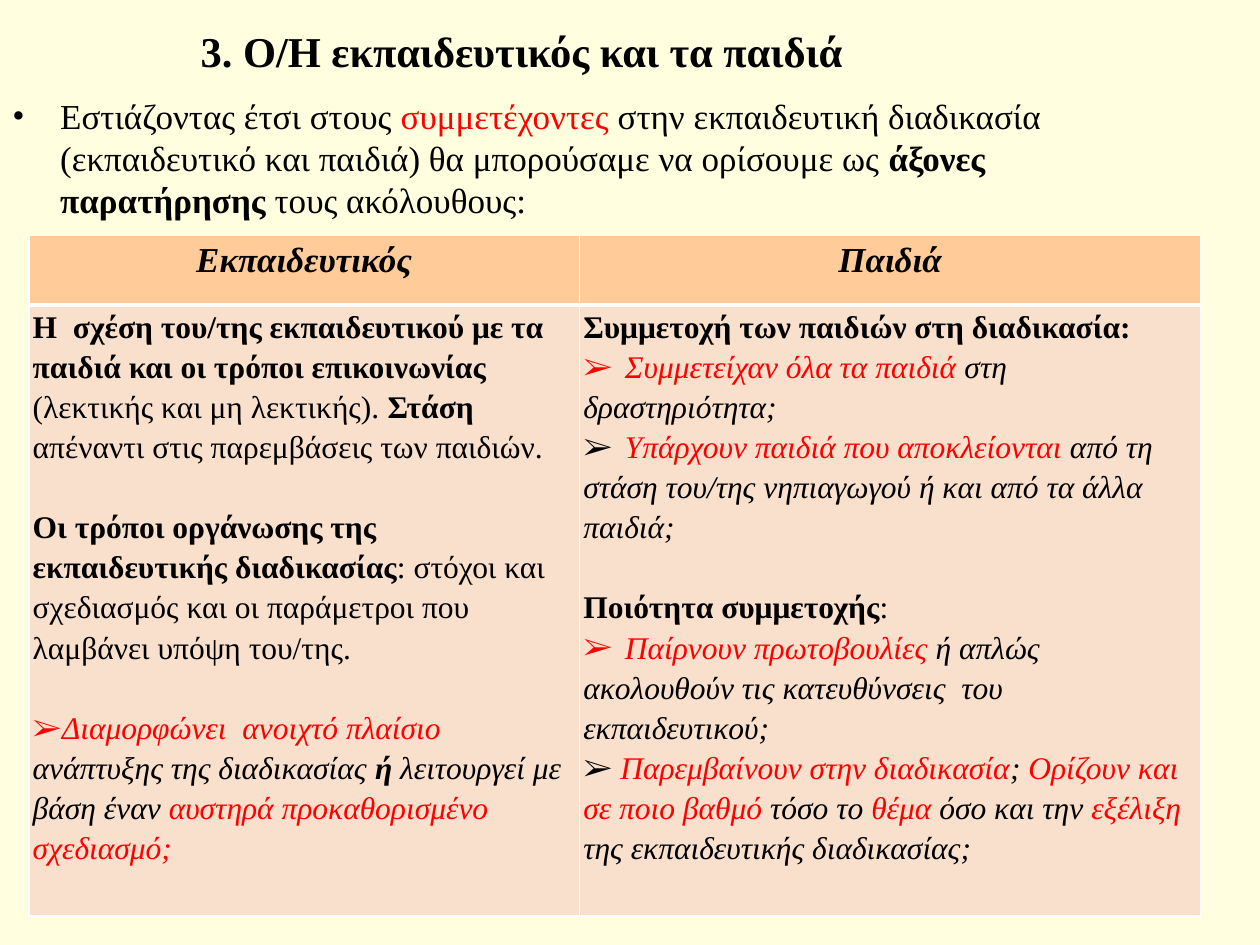
from lxml import etree
from pptx import Presentation
from pptx.dml.color import RGBColor
from pptx.enum import text
from pptx.oxml.ns import qn
from pptx.util import Inches, Pt

THEME = {
    "font": "Times New Roman", "title": 24.3, "lead": 20, "heading": 20, "cell": 18,
    "ink": "000000", "accent": "FF0000", "background": "FFFFE0",
    "header": "FFCC99", "body": "F9E0CD", "border": "FFFFFF",
}

# style letters
TITLE = [("3. Ο/Η εκπαιδευτικός και τα παιδιά", "b")]
LEAD = [
    ("Εστιάζοντας έτσι στους ", ""), ("συμμετέχοντες ", "r"),
    ("στην εκπαιδευτική διαδικασία (εκπαιδευτικό και παιδιά) θα μπορούσαμε να ορίσουμε ως ", ""),
    ("άξονες παρατήρησης ", "b"), ("τους ακόλουθους:", ""),
]
HEADINGS = ["Εκπαιδευτικός", "Παιδιά"]
TEACHER = [
    ("opening", [
        ("Η  σχέση του/της εκπαιδευτικού με τα παιδιά και οι τρόποι επικοινωνίας ", "b"),
        ("(λεκτικής και μη λεκτικής). ", ""), ("Στάση ", "b"),
        ("απέναντι στις παρεμβάσεις των παιδιών.", "")]),
    ("section", [
        ("Οι τρόποι οργάνωσης της εκπαιδευτικής διαδικασίας", "b"),
        (": στόχοι και σχεδιασμός και οι παράμετροι που λαμβάνει υπόψη του/της.", "")]),
    ("section bullet", [
        ("Διαμορφώνει  ανοιχτό πλαίσιο ", "ri"), ("ανάπτυξης της διαδικασίας ", "i"),
        ("ή ", "bi"), ("λειτουργεί με βάση έναν ", "i"),
        ("αυστηρά προκαθορισμένο σχεδιασμό;", "ri")]),
]
CHILDREN = [
    ("opening", [("Συμμετοχή των παιδιών στη διαδικασία:", "b")]),
    ("bullet", [("\tΣυμμετείχαν όλα τα παιδιά ", "ri"), ("στη δραστηριότητα;", "i")]),
    ("bullet", [
        ("\t", "i"), ("Υπάρχουν παιδιά που αποκλείονται", "ri"),
        (" από τη στάση του/της νηπιαγωγού ή και από τα άλλα παιδιά;", "i")]),
    ("section", [("Ποιότητα συμμετοχής", "b"), (":", "")]),
    ("bullet", [
        ("\tΠαίρνουν πρωτοβουλίες ", "ri"),
        ("ή απλώς ακολουθούν τις κατευθύνσεις  του εκπαιδευτικού;", "i")]),
    ("bullet", [
        (" ", "i"), ("Παρεμβαίνουν στην διαδικασία", "ri"), ("; ", "i"),
        ("Ορίζουν και σε ποιο βαθμό ", "ri"), ("τόσο το ", "i"), ("θέμα ", "ri"),
        ("όσο και την ", "i"), ("εξέλιξη", "ri"),
        (" της εκπαιδευτικής διαδικασίας;", "i")]),
]
COLUMN_WIDTHS = [4.37, 4.93]
ROW_HEIGHTS = [0.55, 4.85]


def write(paragraph, pieces, size, align=text.PP_ALIGN.LEFT, spacing=1.0,
          before=0, bullet=None, indent=0, tab=None):
    properties = paragraph._p.get_or_add_pPr()
    if bullet:
        properties.set("marL", str(Inches(indent)))
        properties.set("indent", str(-Inches(indent)))
        etree.SubElement(properties, qn("a:buFont")).set("typeface", THEME["font"])
        etree.SubElement(properties, qn("a:buChar")).set("char", bullet)
    if tab:
        stops = etree.SubElement(properties, qn("a:tabLst"))
        etree.SubElement(stops, qn("a:tab"), pos=str(Inches(tab)), algn="l")
    paragraph.alignment = align
    paragraph.line_spacing = spacing
    if before:
        paragraph.space_before = Pt(before)
    for words, style in pieces:
        run = paragraph.add_run()
        run.text = words
        run.font.name = THEME["font"]
        run.font.size = Pt(size)
        run.font.bold = "b" in style
        run.font.italic = "i" in style
        run.font.color.rgb = RGBColor.from_string(THEME["accent" if "r" in style else "ink"])


def add_box(slide, left, top, width, height, anchor):
    frame = slide.shapes.add_textbox(*map(Inches, (left, top, width, height))).text_frame
    frame.word_wrap = True
    frame.vertical_anchor = anchor
    return frame.paragraphs[0]


def dress(cell, fill, top, bottom):
    properties = cell._tc.get_or_add_tcPr()
    for side, width in (("L", 1), ("R", 1), ("T", top), ("B", bottom)):
        line = etree.SubElement(properties, qn(f"a:ln{side}"), w=str(Pt(width)))
        solid = etree.SubElement(line, qn("a:solidFill"))
        etree.SubElement(solid, qn("a:srgbClr"), val=THEME["border"])
    cell.fill.solid()
    cell.fill.fore_color.rgb = RGBColor.from_string(fill)
    cell.margin_left = cell.margin_right = Inches(0.03)
    cell.margin_top = cell.margin_bottom = 0


def fill_cell(cell, entries):
    for number, (kind, pieces) in enumerate(entries):
        paragraph = cell.text_frame.add_paragraph() if number else cell.text_frame.paragraphs[0]
        write(paragraph, pieces, THEME["cell"], spacing=1.15,
              before=23 if "section" in kind else 0,
              bullet="➢" if "bullet" in kind else None,
              tab=0.33 if pieces[0][0].startswith("\t") else None)


def add_axes(slide):
    table = slide.shapes.add_table(
        2, 2, Inches(0.23), Inches(1.87),
        Inches(sum(COLUMN_WIDTHS)), Inches(sum(ROW_HEIGHTS))).table
    table.first_row = table.horz_banding = False
    for row, height in zip(table.rows, ROW_HEIGHTS):
        row.height = Inches(height)
    for index, (heading, entries) in enumerate(zip(HEADINGS, (TEACHER, CHILDREN))):
        table.columns[index].width = Inches(COLUMN_WIDTHS[index])
        header, body = table.cell(0, index), table.cell(1, index)
        dress(header, THEME["header"], 1, 3)
        dress(body, THEME["body"], 3, 1)
        write(header.text_frame.paragraphs[0], [(heading, "bi")], THEME["heading"],
              align=text.PP_ALIGN.CENTER, spacing=1.15)
        fill_cell(body, entries)


def main():
    deck = Presentation()
    deck.slide_width, deck.slide_height = Inches(10), Inches(7.5)
    slide = deck.slides.add_slide(deck.slide_layouts[6])
    slide.background.fill.solid()
    slide.background.fill.fore_color.rgb = RGBColor.from_string(THEME["background"])
    write(add_box(slide, 0, 0, 8.28, 0.8, text.MSO_ANCHOR.MIDDLE), TITLE, THEME["title"],
          align=text.PP_ALIGN.CENTER)
    write(add_box(slide, 0, 0.7, 9.53, 6.8, text.MSO_ANCHOR.TOP), LEAD, THEME["lead"],
          bullet="•", indent=0.38)
    add_axes(slide)
    deck.save("out.pptx")


if __name__ == "__main__":
    main()
